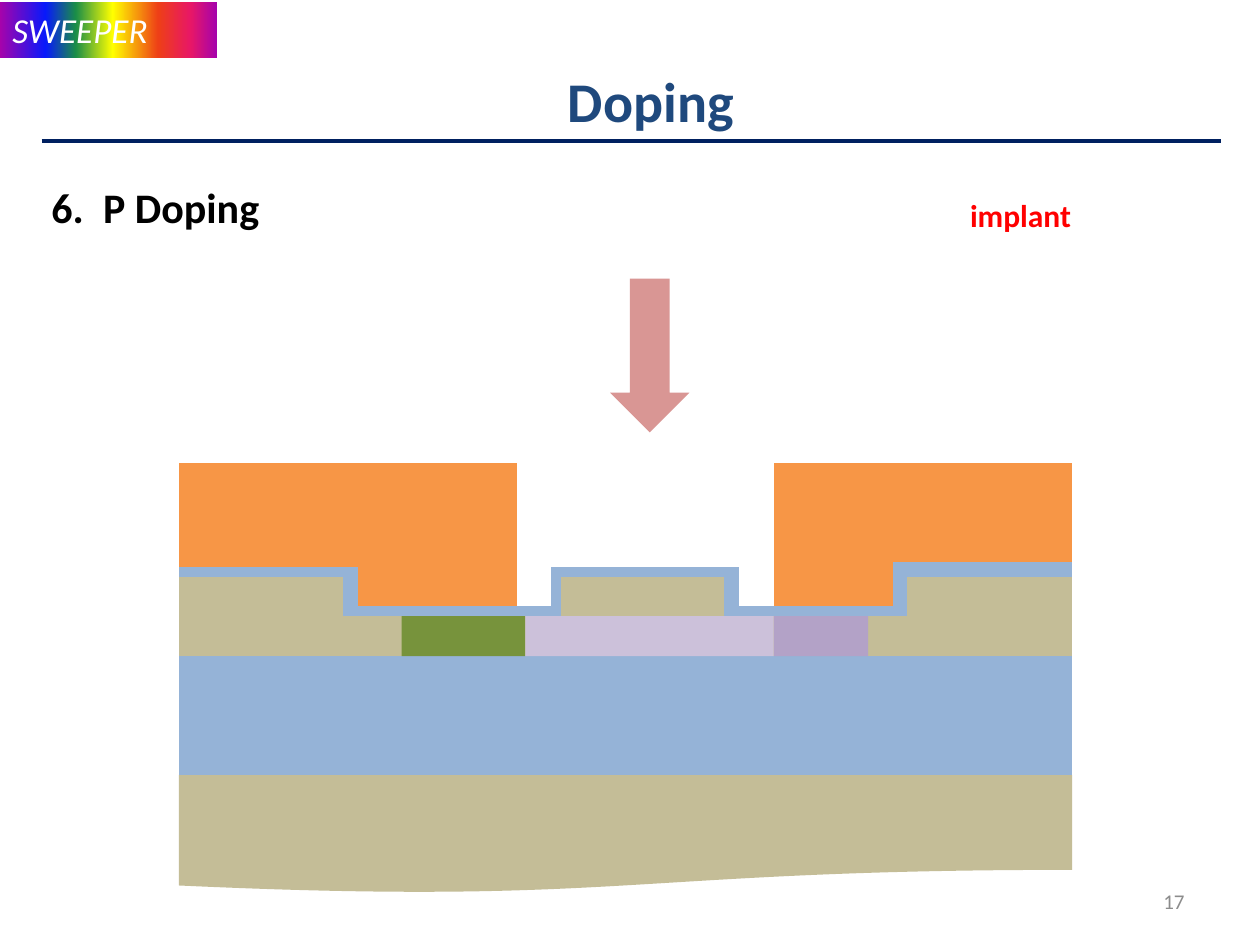
from dataclasses import dataclass

from lxml.etree import SubElement
from pptx import Presentation
from pptx.dml.color import RGBColor
from pptx.enum.shapes import MSO_CONNECTOR, MSO_SHAPE
from pptx.enum.text import MSO_ANCHOR, PP_ALIGN
from pptx.oxml.ns import qn
from pptx.util import Pt


@dataclass(frozen=True)
class Theme:
    font: str = "Calibri"
    title: str = "1F497D"
    rule: str = "002060"
    black: str = "000000"
    white: str = "FFFFFF"
    red: str = "FF0000"
    grey: str = "8C8C8C"
    resist: str = "F79646"
    oxide: str = "95B3D7"
    wafer: str = "C4BD97"
    green: str = "77933C"
    purple: str = "B3A2C7"
    lilac: str = "CCC1DA"
    arrow: str = "D99694"
    rainbow: tuple = ((0, "A603AB"), (21, "0819FB"), (35, "1A8D48"), (52, "FFFF00"),
                      (73, "EE3F17"), (88, "E81766"), (100, "A603AB"))
    big: int = 32
    head: int = 24
    brand: int = 20
    label: int = 18
    small: int = 12


@dataclass(frozen=True)
class Part:
    left: float
    top: float
    right: float
    base: float
    color: str
    kind: MSO_SHAPE = MSO_SHAPE.FLOWCHART_PROCESS


@dataclass(frozen=True)
class Label:
    text: str
    left: float
    top: float
    width: float
    height: float
    size: int
    color: str
    bold: bool = True
    wrap: bool = False
    align: PP_ALIGN = PP_ALIGN.LEFT
    anchor: MSO_ANCHOR = MSO_ANCHOR.TOP
    tab: float = 0


T = Theme()

# Shared edges of the wafer section
LEFT, RIGHT = 102.2, 612.7
MASK, STEP, MESA, FILM, SOI, BOX, BULK = 264.5, 324, 329.8, 346.3, 352.1, 375, 442.8
END = 510.5
MESAS = ((LEFT, 195.8), (320.4, 414), (518.6, RIGHT))

# Drawn before the title
COAT = [
    Part(LEFT, MASK, 295.2, SOI, T.resist),
    Part(442.1, MASK, RIGHT, SOI, T.resist),
    Part(314.6, STEP, 422.3, SOI, T.oxide),
    Part(510.5, 321.1, RIGHT, SOI, T.oxide),
    Part(LEFT, STEP, 204.5, SOI, T.oxide),
    Part(LEFT, FILM, RIGHT, SOI, T.oxide),
]
STACK = [
    Part(LEFT, BULK, RIGHT, END, T.wafer, MSO_SHAPE.FLOWCHART_DOCUMENT),
    Part(LEFT, BOX, RIGHT, BULK, T.oxide),
    Part(LEFT, SOI, RIGHT, BOX, T.wafer),
    *(Part(a, MESA, b, BOX, T.wafer) for a, b in MESAS),
]
DOPED = [
    Part(229.5, SOI, 300.2, BOX, T.green, MSO_SHAPE.RECTANGLE),
    Part(442.1, SOI, 496.1, BOX, T.purple, MSO_SHAPE.RECTANGLE),
    Part(348.6, 159.2, 394, 247.1, T.arrow, MSO_SHAPE.DOWN_ARROW),
    Part(300.2, SOI, 442.1, BOX, T.lilac, MSO_SHAPE.RECTANGLE),
]
LABELS = [
    Label("Doping", 84, 34.6, 576, 44, T.big, T.title, wrap=True, align=PP_ALIGN.CENTER),
    Label("17", 516, 500.5, 168, 28.8, T.small, T.grey, bold=False, wrap=True,
          align=PP_ALIGN.RIGHT, anchor=MSO_ANCHOR.MIDDLE),
    Label("6.\tP Doping", 22.3, 100, 134, 36, T.head, T.black, tab=29.5),
    Label("implant", 547.2, 108.7, 72.7, 28.8, T.label, T.red),
]


def style(para, size: int, color: str, bold: bool = False, italic: bool = False) -> None:
    for run in para.runs:
        font = run.font
        font.name, font.size = T.font, Pt(size)
        font.bold, font.italic = bold, italic
        font.color.rgb = RGBColor.from_string(color)


def draw(slide, part: Part):
    shape = slide.shapes.add_shape(part.kind, Pt(part.left), Pt(part.top),
                                   Pt(part.right - part.left), Pt(part.base - part.top))
    shape.shadow.inherit = False
    shape.fill.solid()
    shape.fill.fore_color.rgb = RGBColor.from_string(part.color)
    shape.line.fill.background()
    return shape


def write(slide, label: Label) -> None:
    box = slide.shapes.add_textbox(Pt(label.left), Pt(label.top),
                                   Pt(label.width), Pt(label.height))
    frame = box.text_frame
    frame.text = label.text
    frame.word_wrap = label.wrap
    frame.vertical_anchor = label.anchor
    para = frame.paragraphs[0]
    para.alignment = label.align
    if label.tab:
        tabs = SubElement(para._p.get_or_add_pPr(), qn("a:tabLst"))
        SubElement(tabs, qn("a:tab"), pos=str(Pt(label.tab)), algn="l")
    style(para, label.size, label.color, label.bold)


def banner(slide) -> None:
    shape = draw(slide, Part(0, 1.4, 123.8, 33.1, T.white, MSO_SHAPE.RECTANGLE))
    shape.fill.gradient()
    shape.fill.gradient_angle = 0
    stops = shape._element.spPr.find(".//" + qn("a:gsLst"))
    for stop in list(stops):
        stops.remove(stop)
    for place, color in T.rainbow:
        stop = SubElement(stops, qn("a:gs"), pos=str(place * 1000))
        SubElement(stop, qn("a:srgbClr"), val=color)
    frame = shape.text_frame
    frame.text = "SWEEPER"
    frame.vertical_anchor = MSO_ANCHOR.TOP
    frame.paragraphs[0].alignment = PP_ALIGN.LEFT
    style(frame.paragraphs[0], T.brand, T.white, italic=True)


def rule(slide) -> None:
    line = slide.shapes.add_connector(MSO_CONNECTOR.STRAIGHT,
                                      Pt(23.8), Pt(80.6), Pt(697.7), Pt(80.6))
    line.line.color.rgb = RGBColor.from_string(T.rule)
    line.line.width = Pt(2)
    SubElement(line._element.spPr, qn("a:effectLst"))


def main() -> None:
    deck = Presentation()
    deck.slide_width, deck.slide_height = Pt(720), Pt(540)
    slide = deck.slides.add_slide(deck.slide_layouts[6])

    # Header
    banner(slide)
    rule(slide)

    # Wafer section, back to front
    for part in COAT + STACK + DOPED:
        draw(slide, part)

    # Title, labels and page number
    for label in LABELS:
        write(slide, label)

    deck.save("out.pptx")


if __name__ == "__main__":
    main()
